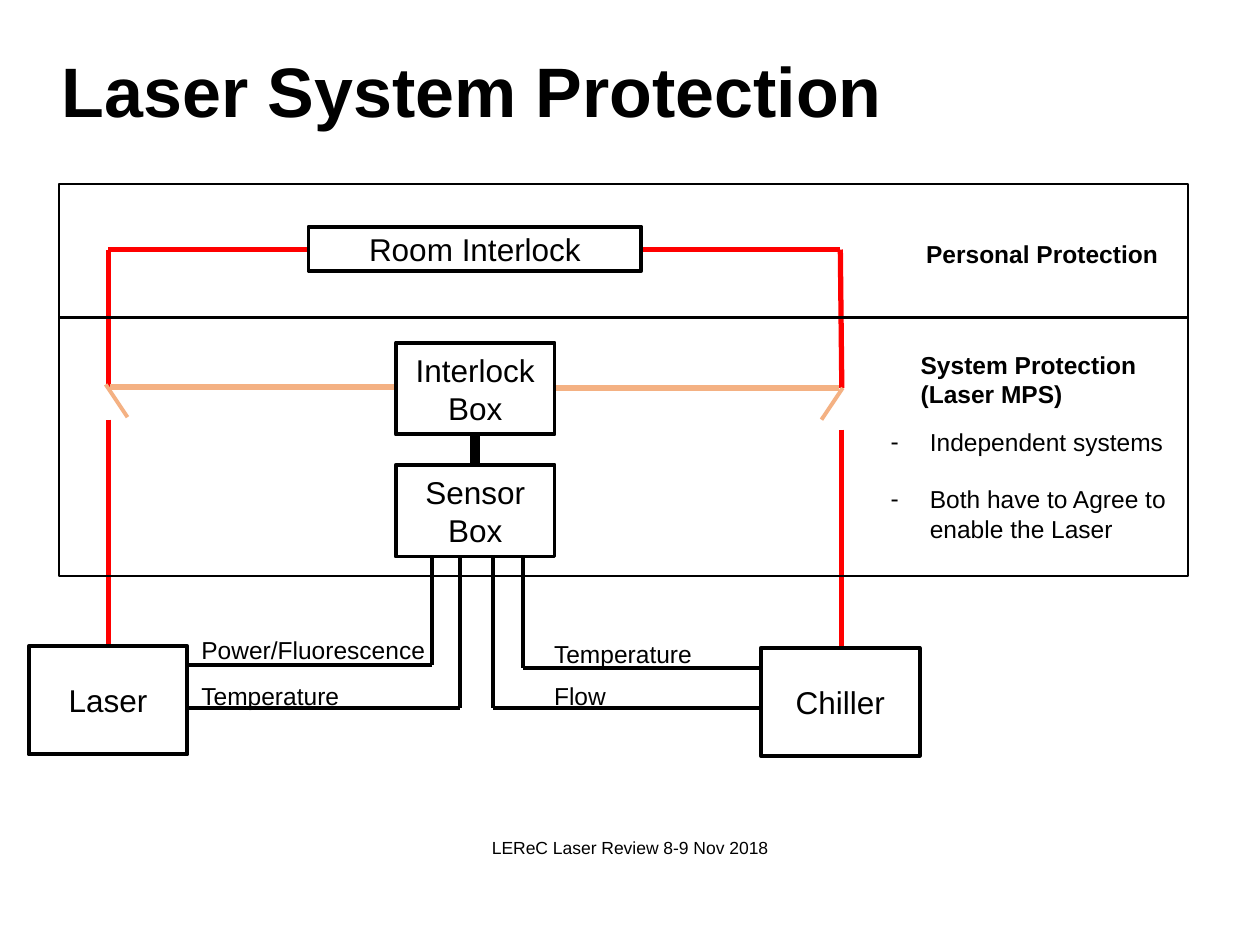
from itertools import pairwise

from lxml.etree import SubElement
from pptx import Presentation
from pptx.dml.color import RGBColor
from pptx.enum.shapes import MSO_CONNECTOR, MSO_SHAPE
from pptx.enum.text import MSO_ANCHOR, PP_ALIGN
from pptx.oxml.ns import qn
from pptx.util import Cm, Pt

BLACK, RED, PEACH = "000000", "FF0000", "F4B183"

TITLE = "Laser System Protection"
POINTS = ["Independent systems", "Both have to Agree to \venable the Laser"]

# text, left, top, width, height, line width
BOXES = [
    ("", 1.19, 3.71, 22.76, 2.69, 1.5),
    ("", 1.19, 6.4, 22.76, 5.21, 1.5),
    ("Laser", 0.58, 13.03, 3.2, 2.18, 2.25),
    ("Chiller", 15.34, 13.06, 3.2, 2.18, 2.25),
    ("Room Interlock", 6.22, 4.57, 6.71, 0.89, 2.25),
    ("Interlock Box", 7.98, 6.91, 3.2, 1.85, 2.25),
    ("Sensor Box", 7.98, 9.37, 3.2, 1.85, 2.25),
]

# text, left, top, width, height, size, bold, align
LABELS = [
    ("Personal Protection", 18.42, 4.7, 5.21, 0.86, 14, True, PP_ALIGN.LEFT),
    ("System Protection\v(Laser MPS)", 18.31, 6.93, 4.88, 1.45, 14, True, PP_ALIGN.LEFT),
    ("Power/Fluorescence", 3.81, 12.67, 5.05, 0.86, 14, False, PP_ALIGN.LEFT),
    ("Temperature", 3.81, 13.61, 3.3, 0.86, 14, False, PP_ALIGN.LEFT),
    ("Temperature", 10.92, 12.75, 3.3, 0.86, 14, False, PP_ALIGN.LEFT),
    ("Flow", 10.92, 13.61, 1.57, 0.86, 14, False, PP_ALIGN.LEFT),
    ("LEReC Laser Review 8-9 Nov 2018", 8.84, 16.74, 7.72, 0.69, 10, False, PP_ALIGN.CENTER),
]

# colour, line width, corner points
WIRES = [
    (RED, 3, [(6.22, 5.03), (2.18, 5.03), (2.18, 7.82)]),
    (RED, 3, [(2.18, 8.46), (2.18, 13.03)]),
    (RED, 3, [(12.93, 5.03), (16.94, 5.03), (16.97, 7.82)]),
    (RED, 3, [(16.97, 8.66), (16.97, 13.06)]),
    (PEACH, 3, [(7.98, 7.8), (2.21, 7.8)]),
    (PEACH, 2.25, [(2.13, 7.75), (2.57, 8.41)]),
    (PEACH, 3, [(11.15, 7.82), (16.92, 7.82)]),
    (PEACH, 2.25, [(16.99, 7.82), (16.56, 8.46)]),
    (BLACK, 2.25, [(3.81, 13.41), (8.71, 13.41), (8.71, 11.2)]),
    (BLACK, 2.25, [(3.81, 14.27), (9.27, 14.27), (9.27, 11.23)]),
    (BLACK, 2.25, [(15.34, 14.27), (9.93, 14.27), (9.93, 11.23)]),
    (BLACK, 2.25, [(15.34, 13.46), (10.54, 13.46), (10.54, 11.23)]),
    (BLACK, 6, [(9.58, 8.76), (9.58, 9.37)]),
]


def paint(color, code):
    color.rgb = RGBColor.from_string(code)


def place(shape, *spot):
    shape.left, shape.top, shape.width, shape.height = map(Cm, spot)


def style(para, size, bold=False, align=PP_ALIGN.LEFT):
    para.alignment = align
    para.space_before = Pt(0)
    font = para.font
    font.name, font.size, font.bold = "Arial", Pt(size), bold
    paint(font.color, BLACK)


def add_box(shapes, text, left, top, width, height, weight):
    box = shapes.add_shape(MSO_SHAPE.RECTANGLE, *map(Cm, (left, top, width, height)))
    box.shadow.inherit = False
    box.fill.background()
    paint(box.line.color, BLACK)
    box.line.width = Pt(weight)
    if text:
        box.text_frame.text = text
        box.text_frame.vertical_anchor = MSO_ANCHOR.MIDDLE
        style(box.text_frame.paragraphs[0], 18, align=PP_ALIGN.CENTER)


def add_label(shapes, text, left, top, width, height, size, bold, align):
    label = shapes.add_textbox(*map(Cm, (left, top, width, height)))
    label.text_frame.word_wrap = align == PP_ALIGN.CENTER
    label.text_frame.text = text
    style(label.text_frame.paragraphs[0], size, bold, align)


def add_wire(shapes, color, weight, corners):
    """Join the corner points with straight lines."""
    for start, end in pairwise(corners):
        wire = shapes.add_connector(MSO_CONNECTOR.STRAIGHT, *map(Cm, start + end))
        paint(wire.line.color, color)
        wire.line.width = Pt(weight)
        SubElement(wire._element.spPr, qn("a:effectLst"))


def fill_title(title):
    place(title, 0.99, 1.02, 23.14, 3.68)
    title.text_frame.text = TITLE
    title.text_frame.vertical_anchor = MSO_ANCHOR.TOP
    para = title.text_frame.paragraphs[0]
    style(para, 40, bold=True)
    para.line_spacing = 0.9


def fill_list(body):
    place(body, 17.7, 8.48, 6.22, 2.64)
    frame = body.text_frame
    frame.text = "\n".join(POINTS)
    frame.word_wrap = False
    for para in frame.paragraphs:
        props = para._p.get_or_add_pPr()
        props.set("marL", str(Cm(0.79)))
        props.set("indent", str(-Cm(0.79)))
        SubElement(props, qn("a:buChar"), char="-")
        style(para, 14)
    frame.paragraphs[0].space_after = Pt(16)


def main():
    deck = Presentation()
    deck.slide_width, deck.slide_height = Cm(25.4), Cm(19.05)
    slide = deck.slides.add_slide(deck.slide_layouts[1])
    fill_title(slide.shapes.title)
    fill_list(slide.placeholders[1])
    for add, items in ((add_wire, WIRES), (add_box, BOXES), (add_label, LABELS)):
        for item in items:
            add(slide.shapes, *item)
    deck.save("out.pptx")


if __name__ == "__main__":
    main()
